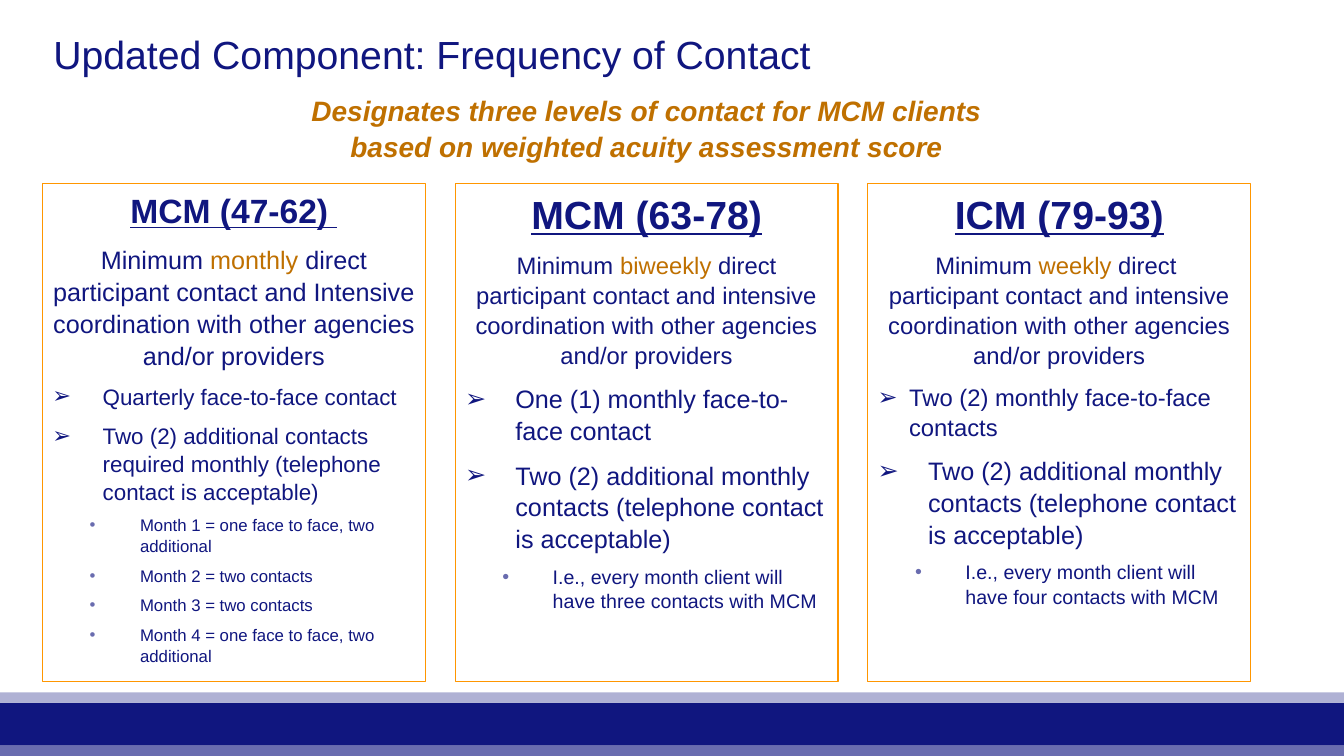
from lxml import etree
from pptx import Presentation
from pptx.dml.color import RGBColor
from pptx.enum import shapes, text
from pptx.oxml import ns
from pptx.util import Cm, Pt

# Content
COLORS = {"navy": "10167F", "violet": "696CAF", "lilac": "AFB1D4",
          "amber": "BF7000", "orange": "FF9600"}
TITLE = "Updated Component: Frequency of Contact"
SUBTITLE = ("Designates three levels of contact for MCM clients "
            "based on weighted acuity assessment score")
DUTY = "participant contact and {} coordination with other agencies and/or providers"
TELEPHONE = "contacts (telephone contact is acceptable)"

# Each level: heading, its size, summary pieces, their size, then
# bullets as (style, size, wording)
LEVELS = [
    ("MCM (47-62) ", 24,
     ["Minimum ", "monthly", " direct " + DUTY.format("Intensive")], 18,
     [("arrow", 16, "Quarterly face-to-face contact"),
      ("arrow", 16, "Two (2) additional contacts required monthly "
                    "(telephone contact is acceptable)"),
      ("dot", 12, "Month 1 = one face to face, two additional"),
      ("dot", 12, "Month 2 = two contacts"),
      ("dot", 12, "Month 3 = two contacts"),
      ("dot", 12, "Month 4 = one face to face, two additional")]),
    ("MCM (63-78)", 28,
     ["Minimum ", "biweekly", " direct " + DUTY.format("intensive")], 17,
     [("arrow", 18, "One (1) monthly face-to-face contact"),
      ("arrow", 18, "Two (2) additional monthly " + TELEPHONE),
      ("dot", 14, "I.e., every month client will have three contacts with MCM")]),
    ("ICM (79-93)", 28,
     ["Minimum ", "weekly ", "direct ", "\n", DUTY.format("intensive")], 17,
     [("tight arrow", 17, "Two (2) monthly face-to-face contacts"),
      ("arrow", 18, "Two (2) additional monthly " + TELEPHONE),
      ("dot", 14, "I.e., every month client will have four contacts with MCM")]),
]

# Bullet style: mark, colour, level, left margin, hanging indent
BULLETS = {
    "arrow": ("➢", "navy", 0, Cm(1.27), Cm(1.27)),
    "tight arrow": ("➢", "navy", 0, Cm(0.79), Cm(0.79)),
    "dot": ("•", "violet", 1, Cm(2.21), Cm(1.27)),
}
BANDS = [("lilac", 17.45, 0.26), ("navy", 17.71, 1.08), ("violet", 18.79, 0.26)]
COLUMN_LEFT, COLUMN_TOP, COLUMN_PITCH = 1.07, 4.62, 10.4
COLUMN_WIDTH, COLUMN_HEIGHT = 9.65, 12.55


def rgb(name):
    return RGBColor.from_string(COLORS[name])


def add_span(para, wording, size, color="navy", **style):
    span = para.add_run()
    span.text = wording
    for name, value in {"name": "Arial", "size": Pt(size), **style}.items():
        setattr(span.font, name, value)
    span.font.color.rgb = rgb(color)


def add_para(frame, size, first=False, align=text.PP_ALIGN.CENTER):
    para = frame.paragraphs[0] if first else frame.add_paragraph()
    layout = {"alignment": align, "line_spacing": 1.05,
              "space_before": Pt(0 if first else size / 2)}
    for name, value in layout.items():
        setattr(para, name, value)
    return para


def add_bullet(para, style):
    mark, color, level, margin, hanging = BULLETS[style]
    para.level = level
    properties = para._p.get_or_add_pPr()
    properties.set("marL", str(margin))
    properties.set("indent", str(-hanging))
    tint = etree.SubElement(properties, ns.qn("a:buClr"))
    etree.SubElement(tint, ns.qn("a:srgbClr"), val=COLORS[color])
    etree.SubElement(properties, ns.qn("a:buFont"), typeface="Arial")
    etree.SubElement(properties, ns.qn("a:buChar"), char=mark)


def format_frame(frame, anchor):
    settings = {"word_wrap": True, "auto_size": text.MSO_AUTO_SIZE.NONE,
                "vertical_anchor": anchor}
    for name, value in settings.items():
        setattr(frame, name, value)


def add_rectangle(page, left, top, width, height):
    shape = page.shapes.add_shape(shapes.MSO_SHAPE.RECTANGLE,
                                  Cm(left), Cm(top), Cm(width), Cm(height))
    shape.shadow.inherit = False
    return shape


def add_level(page, left, heading, heading_size, summary, summary_size, bullets):
    box = add_rectangle(page, left, COLUMN_TOP, COLUMN_WIDTH, COLUMN_HEIGHT)
    box.fill.background()
    box.line.color.rgb = rgb("orange")
    box.line.width = Pt(0.75)
    frame = box.text_frame
    format_frame(frame, text.MSO_ANCHOR.TOP)

    para = add_para(frame, heading_size, first=True)
    add_span(para, heading, heading_size, bold=True, underline=True)

    para = add_para(frame, summary_size)
    for index, piece in enumerate(summary):
        if piece == "\n":
            para.add_line_break()
        else:
            add_span(para, piece, summary_size, "amber" if index == 1 else "navy")

    for style, size, wording in bullets:
        para = add_para(frame, size, align=text.PP_ALIGN.LEFT)
        add_bullet(para, style)
        add_span(para, wording, size)


def main():
    deck = Presentation()
    deck.slide_width, deck.slide_height = Cm(33.87), Cm(19.05)
    page = deck.slides.add_slide(deck.slide_layouts[5])

    # Footer bands
    for color, top, height in BANDS:
        band = add_rectangle(page, 0, top, 33.87, height)
        band.fill.solid()
        band.fill.fore_color.rgb = rgb(color)
        band.line.fill.background()

    # Title
    title = page.shapes.title
    title.left, title.top, title.width, title.height = (
        Cm(1.09), Cm(0.58), Cm(26.82), Cm(3.18))
    format_frame(title.text_frame, text.MSO_ANCHOR.TOP)
    para = add_para(title.text_frame, 28, first=True, align=text.PP_ALIGN.LEFT)
    add_span(para, TITLE, 28)

    # Subtitle
    subtitle = page.shapes.add_textbox(Cm(7.01), Cm(2.16), Cm(18.57), Cm(2.11))
    format_frame(subtitle.text_frame, text.MSO_ANCHOR.MIDDLE)
    para = add_para(subtitle.text_frame, 20, first=True)
    add_span(para, SUBTITLE, 20, "amber", bold=True, italic=True)

    # Contact levels
    for index, level in enumerate(LEVELS):
        add_level(page, COLUMN_LEFT + index * COLUMN_PITCH, *level)

    deck.save("out.pptx")


if __name__ == "__main__":
    main()
